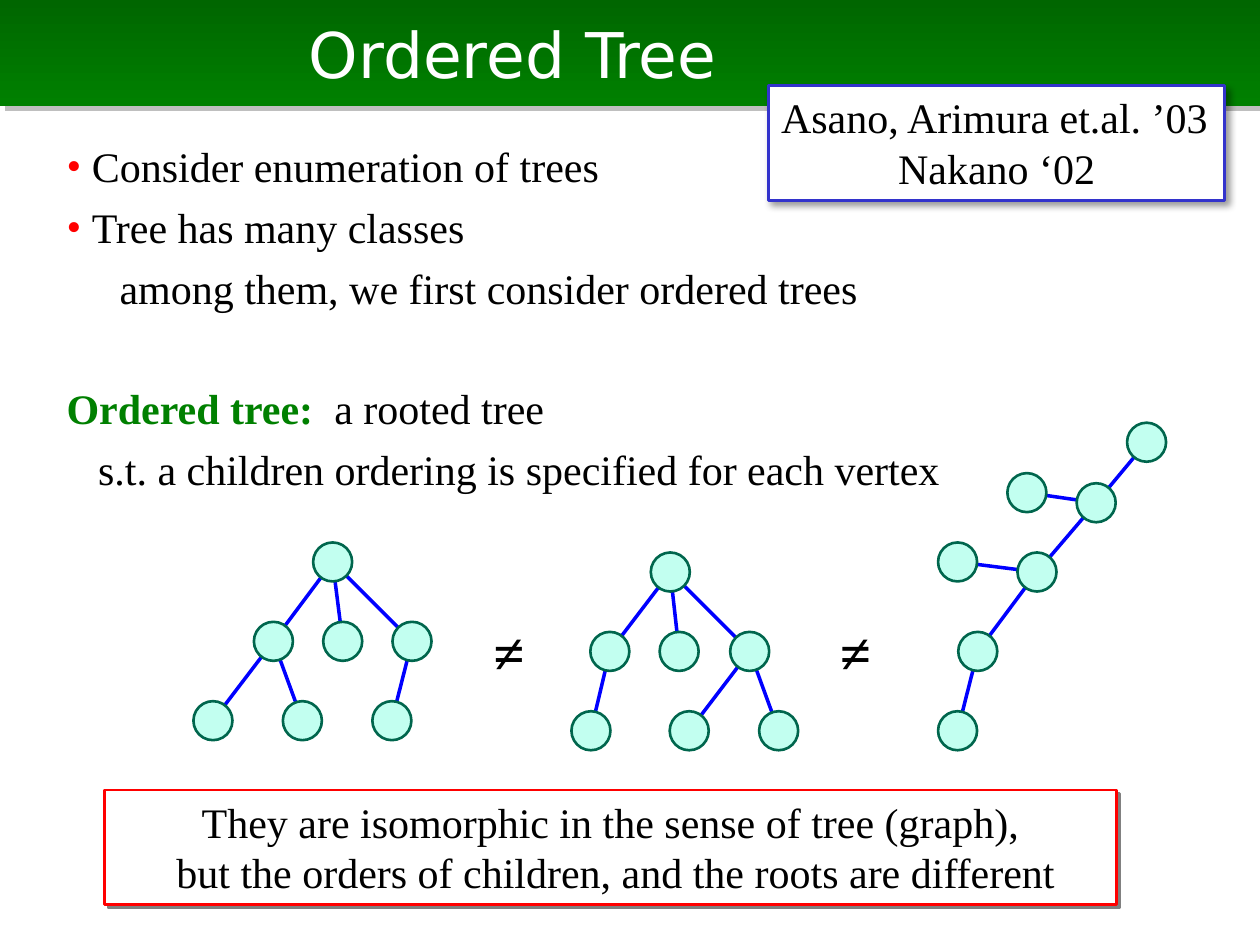
"""Build the slide that introduces ordered trees."""
from lxml import etree
from pptx import Presentation
from pptx import util as u
from pptx.dml.color import RGBColor
from pptx.enum import shapes, text
from pptx.oxml import parse_xml
from pptx.oxml.ns import nsdecls, qn

COLORS = {
    "black": "000000", "white": "FFFFFF", "red": "FF0000", "green": "008000",
    "dark_green": "006600", "edge": "0000FF", "node": "C2FFF0",
    "node_line": "00664D", "indigo": "3333CC", "gray": "808080",
}
SERIF = "Times New Roman"


def add_span(para, words, color="black", size=24, bold=False, font=SERIF):
    """Add one formatted run to a paragraph."""
    span = para.add_run()
    span.text = words
    span.font.name = font
    span.font.size = u.Pt(size)
    span.font.bold = bold
    span.font.color.rgb = RGBColor.from_string(COLORS[color])


def add_shadow(shape, color, opacity, blur, distance):
    """Give a shape a shadow to the lower right."""
    properties = shape._element.spPr
    for old in properties.findall(qn("a:effectLst")):
        properties.remove(old)
    properties.append(parse_xml(
        f'<a:effectLst {nsdecls("a")}><a:outerShdw blurRad="{u.Pt(blur)}" '
        f'dist="{u.Pt(distance)}" dir="2700000" algn="tl" rotWithShape="0">'
        f'<a:srgbClr val="{COLORS[color]}"><a:alpha val="{opacity * 1000}"/>'
        '</a:srgbClr></a:outerShdw></a:effectLst>'))


deck = Presentation()
deck.slide_width, deck.slide_height = u.Inches(10), u.Inches(7.5)
page = deck.slides.add_slide(deck.slide_layouts[5])

title = page.shapes.title
title.left, title.top = u.Inches(0), u.Inches(0)
title.width, title.height = u.Inches(10), u.Inches(0.84)
title.fill.gradient()
title.fill.gradient_angle = 270
for stop, color in zip(title.fill.gradient_stops, ("dark_green", "green")):
    stop.color.rgb = RGBColor.from_string(COLORS[color])
add_shadow(title, "gray", 50, 0, 4.2)
title.text_frame.margin_left = u.Inches(2.45)
title.text_frame.vertical_anchor = text.MSO_ANCHOR.MIDDLE
para = title.text_frame.paragraphs[0]
para.alignment = text.PP_ALIGN.LEFT
add_span(para, "Ordered Tree", "white", 36, font="DejaVu Sans")

body_lines = [
    (0.2, True, 6, [("Consider enumeration of trees", "black", False)]),
    (0.2, True, 6, [("Tree has many classes", "black", False)]),
    (0.42, False, 6, [("among them, we first consider ordered trees", "black", False)]),
    (0, False, 39.5, [("Ordered tree: ", "green", True), (" a rooted tree", "black", False)]),
    (0.25, False, 6, [("s.t. a children ordering is specified for each vertex", "black", False)]),
]
body = page.shapes.add_textbox(u.Inches(0.43), u.Inches(1.07), u.Inches(7.88), u.Inches(3.07))
body.text_frame.word_wrap = True
for index, (indent, bulleted, space, spans) in enumerate(body_lines):
    para = body.text_frame.add_paragraph() if index else body.text_frame.paragraphs[0]
    para.space_before = u.Pt(space)
    for words, color, bold in spans:
        add_span(para, words, color, bold=bold)
    settings = para._p.get_or_add_pPr()
    settings.set("marL", str(u.Inches(indent)))
    if bulleted:
        settings.set("indent", str(-u.Inches(indent)))
        bullet_color = etree.SubElement(settings, qn("a:buClr"))
        etree.SubElement(bullet_color, qn("a:srgbClr"), val=COLORS["red"])
        etree.SubElement(settings, qn("a:buFont"), typeface=SERIF)
        etree.SubElement(settings, qn("a:buChar"), char="•")

# Each node is (centre x, centre y, index of its parent).
trees = [
    [(2.64, 4.46, None), (2.17, 5.09, 0), (2.72, 5.09, 0), (3.27, 5.09, 0),
     (1.69, 5.72, 1), (2.4, 5.72, 1), (3.11, 5.72, 3)],
    [(5.32, 4.54, None), (4.84, 5.17, 0), (5.39, 5.17, 0), (5.95, 5.17, 0),
     (4.69, 5.8, 1), (5.47, 5.8, 3), (6.18, 5.8, 3)],
    [(9.1, 3.51, None), (8.7, 3.99, 0), (8.15, 3.91, 1), (8.23, 4.54, 1),
     (7.6, 4.46, 3), (7.76, 5.17, 3), (7.6, 5.8, 5)],
]
diameter = 0.31
for tree in trees:
    for x, y, parent in tree[1:]:
        parent_x, parent_y, _ = tree[parent]
        edge = page.shapes.add_connector(
            shapes.MSO_CONNECTOR.STRAIGHT, u.Inches(parent_x), u.Inches(parent_y),
            u.Inches(x), u.Inches(y))
        edge.line.color.rgb = RGBColor.from_string(COLORS["edge"])
        edge.line.width = u.Pt(2)
        etree.SubElement(edge._element.spPr, qn("a:effectLst"))
    for x, y, _ in tree:
        node = page.shapes.add_shape(
            shapes.MSO_SHAPE.OVAL, u.Inches(x - diameter / 2), u.Inches(y - diameter / 2),
            u.Inches(diameter), u.Inches(diameter))
        node.shadow.inherit = False
        node.fill.solid()
        node.fill.fore_color.rgb = RGBColor.from_string(COLORS["node"])
        node.line.color.rgb = RGBColor.from_string(COLORS["node_line"])
        node.line.width = u.Pt(1.5)

for left in (3.82, 6.57):
    sign = page.shapes.add_textbox(u.Inches(left), u.Inches(4.85), u.Inches(0.39), u.Inches(0.63))
    add_span(sign.text_frame.paragraphs[0], "≠", size=32, bold=True)

LEFT, CENTER = text.PP_ALIGN.LEFT, text.PP_ALIGN.CENTER
notices = [
    ((0.83, 6.27, 8.03, 0.91), "red", ("gray", 100, 0, 2.8), True,
     [("They are isomorphic in the sense of tree (graph),", CENTER),
      (" but the orders of children, and the roots are different", CENTER)]),
    ((6.1, 0.68, 3.62, 0.91), "indigo", ("black", 40, 4, 3), False,
     [("Asano, Arimura et.al. ’03", LEFT), ("Nakano ‘02", CENTER)]),
]
for place, outline, shadow, wrap, lines in notices:
    box = page.shapes.add_shape(shapes.MSO_SHAPE.RECTANGLE, *map(u.Inches, place))
    box.fill.solid()
    box.fill.fore_color.rgb = RGBColor.from_string(COLORS["white"])
    box.line.color.rgb = RGBColor.from_string(COLORS[outline])
    box.line.width = u.Pt(1.5)
    add_shadow(box, *shadow)
    box.text_frame.word_wrap = wrap
    box.text_frame.vertical_anchor = text.MSO_ANCHOR.TOP
    for index, (words, alignment) in enumerate(lines):
        para = box.text_frame.add_paragraph() if index else box.text_frame.paragraphs[0]
        para.alignment = alignment
        add_span(para, words)

deck.save("out.pptx")
